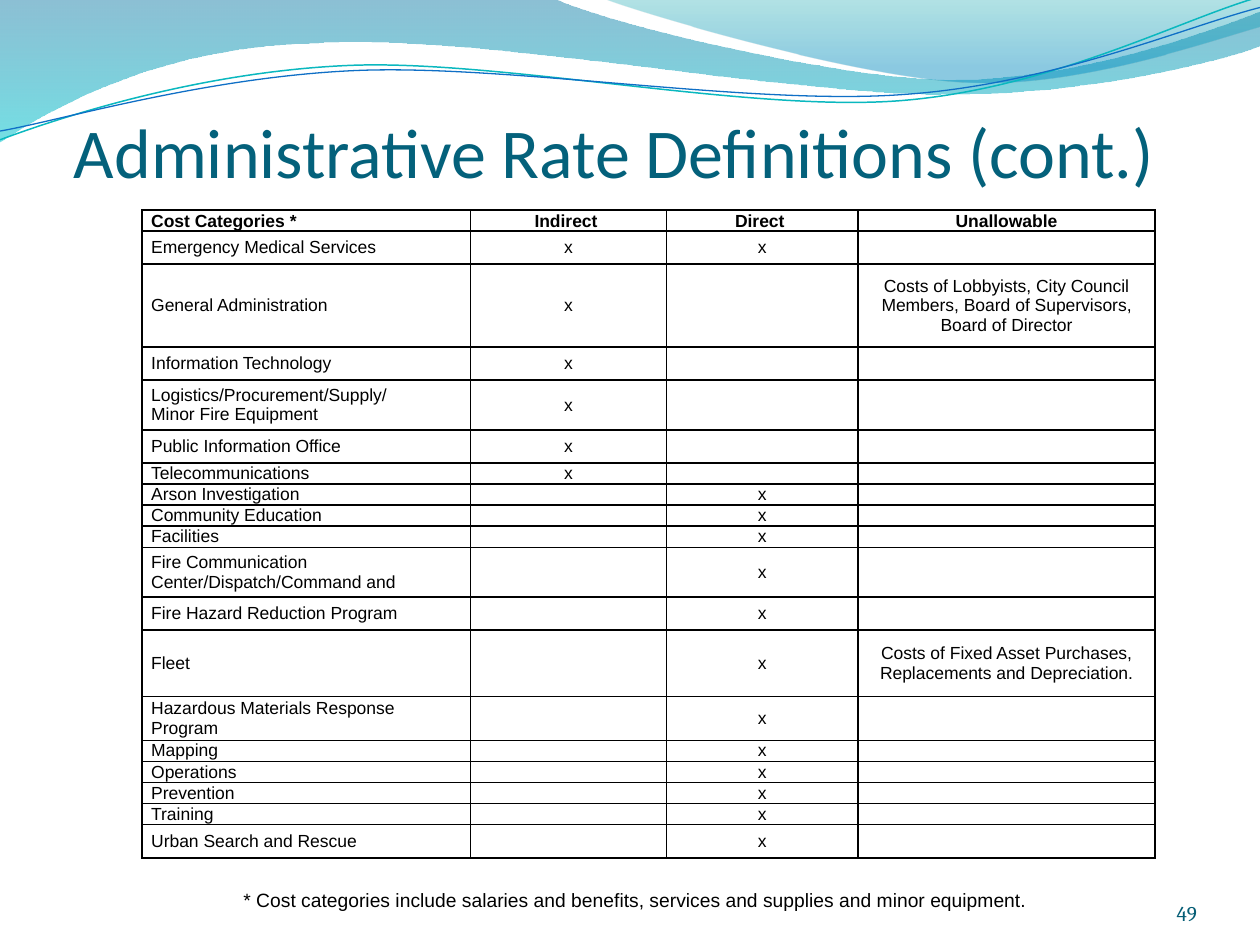
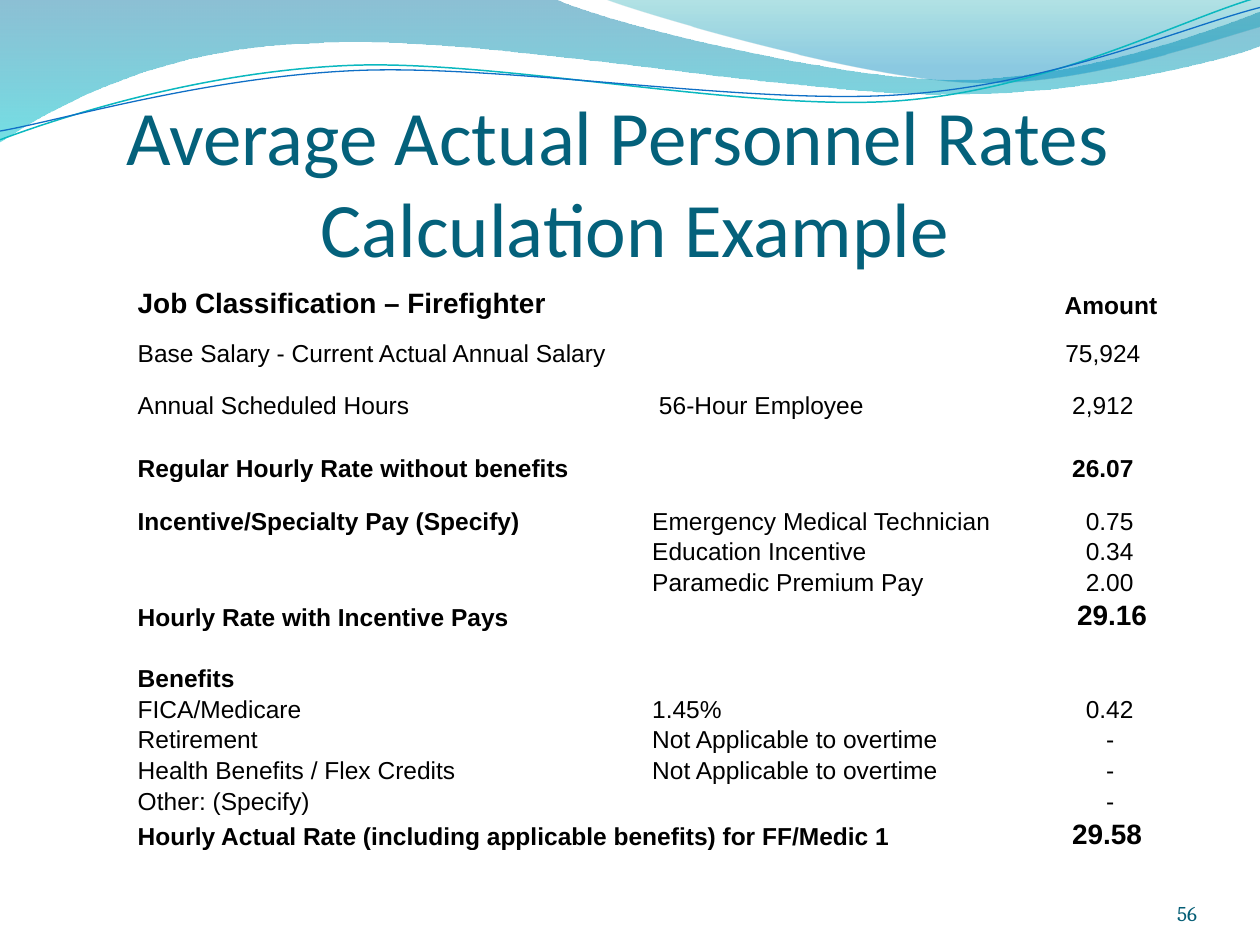
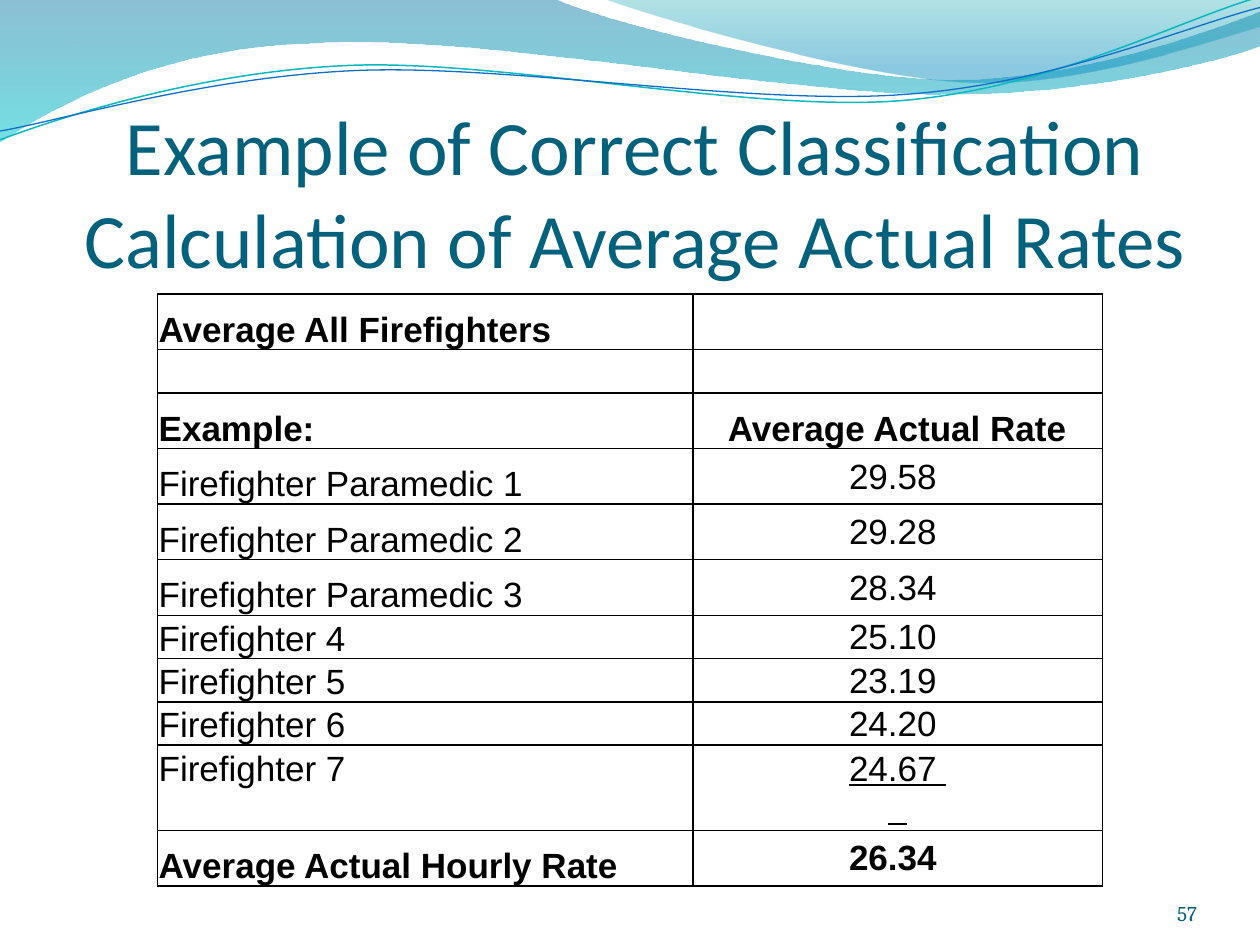
from math import cos, radians, sin
from pptx import Presentation
from pptx.dml.color import RGBColor
from pptx.enum.text import MSO_ANCHOR as Anchor, PP_ALIGN as Align
from pptx.oxml.ns import qn
from pptx.util import Pt
from lxml.etree import SubElement

COLORS = {
    "title": "04617B", "number": "045D75", "text": "000000", "border": "000000",
    "white": "FFFFFF", "band_top": "0074A1", "band_bottom": "00C6CF",
    "crest_top": "00A1A9", "crest_bottom": "008BBF",
    "teal_line": "0AB8BF", "blue_line": "0F6FC6",
}
BAND = [(0, 0), (316.8, -0.7), (342.7, 12.2, 478.1, 45.4, 545.8, 45.4),
        (614.2, 45.4, 689.8, 18.7, 720, 6.5), (720.7, 25.9),
        (707.8, 31.7, 626.4, 54.7, 537.1, 54), (447.8, 54, 275, 20.2, 185, 24.5),
        (92.9, 25.9, 33.1, 59.8, -0.7, 81.4), (0, 0)]
CREST = [(344.9, -0.7), (366.5, 7.9, 491, 44.6, 553.7, 46.8),
         (616.3, 49.7, 691.9, 23, 720, 15.1), (720, 0), (344.9, -0.7)]
TEAL_WAVE = [(0, 79.9), (34.6, 67, 113.8, 41, 199.4, 37.4),
             (284.4, 33.8, 427, 64.1, 513.4, 57.6), (599.8, 51.1, 675.4, 10.8, 718.6, -1.4)]
BLUE_WAVE = [(0, 74.9), (33.8, 69.1, 118.1, 43.9, 203.8, 40.3),
             (290.2, 36.7, 429.8, 60.5, 516.2, 54), (601.9, 48.2, 677.5, 15.1, 720, 4.3)]
WAVE_TILT = -2.7
WAVE_CENTER = (359.5, 40.5)
BOLD = {"bold": True}
WHITE = {"bold": True, "color": "white"}
TIGHT = (0.7, 0.7, 0.7, 0)


def rgb(name):
    return RGBColor.from_string(COLORS[name])


def write_text(frame, text, size=12, font="Arial", color="text", bold=False,
               underline=False, align=Align.LEFT):
    for index, line in enumerate(text.split("\n")):
        paragraph = frame.add_paragraph() if index else frame.paragraphs[0]
        paragraph.text = line
        paragraph.alignment = align
        for run in paragraph.runs:
            run.font.size = Pt(size)
            run.font.name = font
            run.font.bold = bold
            run.font.underline = underline
            run.font.color.rgb = rgb(color)
        if not line:
            ending = paragraph._p.get_or_add_endParaRPr()
            ending.set("sz", str(size * 100))
            SubElement(ending, qn("a:latin"), typeface=font)


def set_insets(target, insets):
    (target.margin_left, target.margin_top,
     target.margin_right, target.margin_bottom) = map(Pt, insets)


def turn(segment, degrees):
    cosine, sine = cos(radians(degrees)), sin(radians(degrees))
    center_x, center_y = WAVE_CENTER
    turned = []
    for x, y in zip(segment[::2], segment[1::2]):
        across, down = x - center_x, y - center_y
        turned += [center_x + across * cosine - down * sine,
                   center_y + across * sine + down * cosine]
    return tuple(turned)


def bend(shape, segments):
    lines = list(shape._element.iter(qn("a:lnTo")))
    for line, segment in zip(lines, segments[1:]):
        if len(segment) == 6:
            line.tag = qn("a:cubicBezTo")
            for index in (0, 1):
                x, y = segment[2 * index:2 * index + 2]
                position = {"x": str(Pt(x) - shape.left), "y": str(Pt(y) - shape.top)}
                line.insert(index, line.makeelement(qn("a:pt"), position))


def draw_borders(cell):
    properties = cell._tc.get_or_add_tcPr()
    for position, side in enumerate(("a:lnL", "a:lnR", "a:lnT", "a:lnB")):
        line = properties.makeelement(qn(side), {"w": str(Pt(1))})
        fill = SubElement(line, qn("a:solidFill"))
        SubElement(fill, qn("a:srgbClr"), val=COLORS["border"])
        properties.insert(position, line)


class Deck:
    def __init__(self):
        self.presentation = Presentation()
        self.presentation.slide_width = Pt(720)
        self.presentation.slide_height = Pt(540)
        self.layout = self.presentation.slide_layouts[6]
        self.slide = None

    def new_slide(self, title, box, size, number):
        self.slide = self.presentation.slides.add_slide(self.layout)
        if len(self.presentation.slides) == 1:
            self.draw_waves()
        self.text(title, box, anchor=Anchor.BOTTOM, insets=(0, 3.6, 0, 0), size=size,
                  font="Calibri", color="title", align=Align.CENTER)
        self.text(str(number), (624, 500.4, 60, 28.8), anchor=Anchor.BOTTOM,
                  insets=(0, 0, 0, 0), font="Cambria", color="number", align=Align.RIGHT)

    def outline(self, segments, closed):
        points = [(Pt(segment[-2]), Pt(segment[-1])) for segment in segments]
        builder = self.slide.shapes.build_freeform(*points[0], scale=1.0)
        builder.add_line_segments(points[1:], close=closed)
        shape = builder.convert_to_shape()
        bend(shape, segments)
        shape.shadow.inherit = False
        self.layout.shapes._spTree.append(shape._element)
        return shape

    def gradient_band(self, segments, stops):
        shape = self.outline(segments, True)
        shape.line.fill.background()
        shape.fill.gradient()
        shape.fill.gradient_angle = 270
        for stop, (color, position, opacity) in zip(shape.fill.gradient_stops, stops):
            stop.color.rgb = rgb(color)
            stop.position = position
        fills = shape._element.spPr.iter(qn("a:srgbClr"))
        for element, (color, position, opacity) in zip(fills, stops):
            SubElement(element, qn("a:alpha"), val=str(opacity * 1000))

    def wave_line(self, segments, color, width):
        shape = self.outline([turn(segment, -WAVE_TILT) for segment in segments], False)
        shape.rotation = WAVE_TILT
        shape.fill.background()
        shape.line.color.rgb = rgb(color)
        shape.line.width = Pt(width)

    def draw_waves(self):
        self.gradient_band(BAND, [("band_top", 0, 45), ("band_bottom", 1, 55)])
        self.gradient_band(CREST, [("crest_top", 0, 30), ("crest_bottom", 0.8, 45)])
        self.wave_line(TEAL_WAVE, "teal_line", 0.85)
        self.wave_line(BLUE_WAVE, "blue_line", 0.75)

    def text(self, text, box, anchor=Anchor.TOP, insets=(7.2, 3.6, 7.2, 3.6), **text_format):
        frame = self.slide.shapes.add_textbox(*map(Pt, box)).text_frame
        frame.word_wrap = True
        frame.vertical_anchor = anchor
        set_insets(frame, insets)
        write_text(frame, text, **text_format)

    def table(self, position, widths, heights, rows, insets, size, aligns,
              anchors, bordered=True):
        frame = self.slide.shapes.add_table(
            len(rows), len(widths), *map(Pt, (*position, sum(widths), sum(heights))))
        table = frame.table
        table.first_row = table.horz_banding = False
        for column, width in zip(table.columns, widths):
            column.width = Pt(width)
        for row, height in zip(table.rows, heights):
            row.height = Pt(height)
        for row_index, row in enumerate(rows):
            for column_index, content in enumerate(row):
                text, changes = content if isinstance(content, tuple) else (content, {})
                options = {"size": size, "align": aligns[column_index],
                           "anchor": anchors[column_index],
                           "left": insets[0], "top": insets[1], **changes}
                cell = table.cell(row_index, column_index)
                cell.fill.background()
                cell.vertical_anchor = options.pop("anchor")
                set_insets(cell, (options.pop("left"), options.pop("top"), *insets[2:]))
                write_text(cell.text_frame, text, **options)
                if bordered:
                    draw_borders(cell)
        return table


def category_slide(deck):
    deck.new_slide("Administrative Rate Definitions (cont.)  ", (36, 36, 648, 74.2), 40, 49)
    small, medium, double = 11.5, 18.9, 28.5
    lobbying = ("Costs of Lobbyists, City Council Members, Board of Supervisors, "
                "Board of Director")
    assets = "Costs of Fixed Asset Purchases, Replacements and Depreciation."
    categories = [
        ("Emergency Medical Services", medium, "x", "x", ""),
        ("General Administration", 47.4, "x", "", lobbying),
        ("Information Technology", medium, "x", "", ""),
        ("Logistics/Procurement/Supply/\nMinor Fire Equipment", double, "x", "", ""),
        ("Public Information Office", medium, "x", "", ""),
        ("Telecommunications", small, "x", "", ""),
        ("Arson Investigation", small, "", "x", ""),
        ("Community Education", small, "", "x", ""),
        ("Facilities", small, "", "x", ""),
        ("Fire Communication Center/Dispatch/Command and", double, "", "x", ""),
        ("Fire Hazard Reduction Program", medium, "", "x", ""),
        ("Fleet", 37.9, "", "x", assets),
        ("Hazardous Materials Response Program", 25.1, "", "x", ""),
        ("Mapping", small, "", "x", ""),
        ("Operations", small, "", "x", ""),
        ("Prevention", small, "", "x", ""),
        ("Training", small, "", "x", ""),
        ("Urban Search and Rescue", medium, "", "x", ""),
    ]
    header = [(text, {"bold": True, "anchor": Anchor.BOTTOM}) for text in
              ("Cost Categories *", "Indirect ", "Direct ", "Unallowable")]
    deck.table((81, 120), (187.8, 112, 109.5, 169.7),
               [small] + [height for name, height, *marks in categories],
               [header] + [[name, *marks] for name, height, *marks in categories],
               (5.4, 0, 5.4, 0), 10, [Align.LEFT] + [Align.CENTER] * 3, [Anchor.MIDDLE] * 4)
    deck.text("* Cost categories include salaries and benefits, services and supplies "
              "and minor equipment.", (132, 504, 474, 20.6), size=11)


def personnel_slide(deck):
    deck.new_slide("Average Actual Personnel Rates  \vCalculation Example",
                   (24, 42, 678, 114), 44, 56)

    def amount(text, left, **changes):
        return text, {"left": left, **changes}

    dash = amount("-", 39.6)
    overtime = "Not Applicable to overtime"
    rows = [
        [("Job Classification – Firefighter", {"bold": True, "size": 16}), "",
         (" Amount ", {"bold": True, "align": Align.RIGHT})],
        ["Base Salary - Current Actual Annual Salary", "", amount("75,924", 16.3)],
        ["Annual Scheduled Hours", " 56-Hour Employee", amount("2,912", 20.2)],
        [("Regular Hourly Rate without benefits", BOLD), "", amount("26.07", 20.2, bold=True)],
        [("Incentive/Specialty Pay (Specify)", BOLD), "Emergency Medical Technician",
         amount("0.75", 28)],
        ["", "Education Incentive", amount("0.34", 28)],
        ["", "Paramedic Premium Pay", amount("2.00", 28)],
        [("Hourly Rate with Incentive Pays", BOLD), "",
         amount("29.16", 23, bold=True, size=16)],
        [(" .", WHITE), "", ""],
        [("Benefits", BOLD), "", ""],
        ["FICA/Medicare", "1.45%", amount("0.42", 28)],
        ["Retirement", overtime, dash],
        ["Health Benefits / Flex Credits", overtime, dash],
        ["Other: (Specify)", "", dash],
        [("Hourly Actual Rate (including applicable benefits) for FF/Medic 1", BOLD), "",
         amount("29.58", 20.2, bold=True, size=16)],
    ]
    line, tall = 16.9, 19.2
    heights = [24.2, 27.4, 29.8, 36, 30.2, line, line, tall, 16.5] + [line] * 5 + [tall]
    table = deck.table((78, 158.4), (294, 220.5, 73.5), heights, rows, TIGHT, 14,
                       [Align.LEFT] * 3, [Anchor.BOTTOM] * 3, bordered=False)
    table.cell(14, 0).merge(table.cell(14, 1))


def average_slide(deck):
    deck.new_slide("Example of Correct Classification Calculation of Average Actual Rates",
                   (24, 48, 678, 114), 44, 57)
    rows = [
        [("Average All Firefighters", BOLD), ""],
        ["", (".", {"anchor": Anchor.BOTTOM, "align": Align.LEFT, **WHITE})],
        [("Example:", BOLD),
         (" Average Actual Rate ", {"bold": True, "anchor": Anchor.BOTTOM})],
        ["Firefighter Paramedic 1", "29.58 "],
        ["Firefighter Paramedic 2", "29.28 "],
        ["Firefighter Paramedic 3", "28.34 "],
        ["Firefighter 4", "25.10 "],
        ["Firefighter 5", "23.19 "],
        ["Firefighter 6", "24.20 "],
        [("Firefighter 7", {"anchor": Anchor.TOP, "top": 2.7}),
         ("24.67 \n  ", {"underline": True})],
        [("Average Actual Hourly Rate", BOLD), ("26.34 ", BOLD)],
    ]
    low, high = 24.4, 31.8
    heights = [high, low] + [high] * 4 + [low] * 3 + [47.8, high]
    deck.table((90, 168), (306, 234), heights, rows, TIGHT, 20,
               [Align.LEFT, Align.CENTER], [Anchor.BOTTOM, Anchor.MIDDLE])


def main():
    deck = Deck()
    category_slide(deck)
    personnel_slide(deck)
    average_slide(deck)
    deck.presentation.save("out.pptx")


if __name__ == "__main__":
    main()
